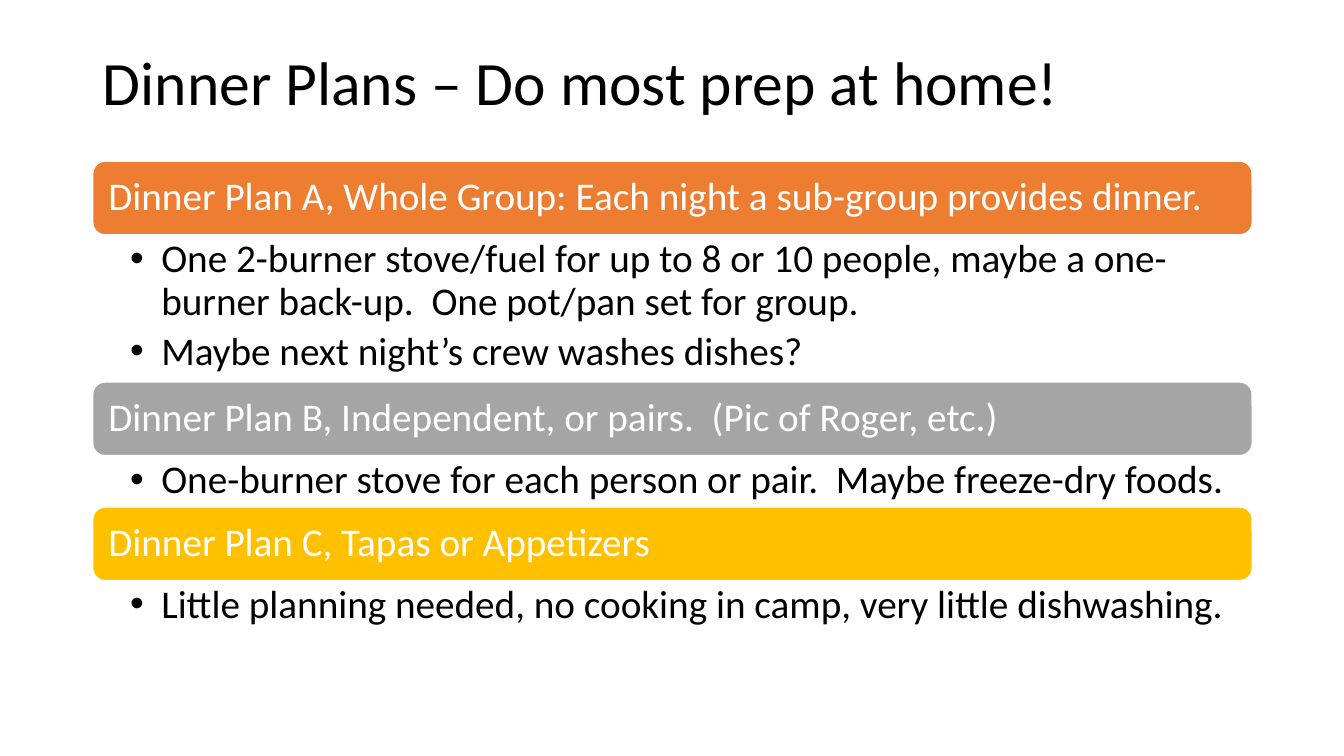
from dataclasses import dataclass

from lxml import etree
from pptx import Presentation
from pptx.dml.color import RGBColor
from pptx.enum.shapes import MSO_SHAPE
from pptx.enum.text import MSO_ANCHOR, MSO_AUTO_SIZE, PP_ALIGN
from pptx.oxml.ns import qn
from pptx.util import Inches, Pt

ROUNDED = MSO_SHAPE.ROUNDED_RECTANGLE
TOP, MIDDLE, BOTTOM = MSO_ANCHOR.TOP, MSO_ANCHOR.MIDDLE, MSO_ANCHOR.BOTTOM
LEFT = PP_ALIGN.LEFT
NO_AUTOFIT = MSO_AUTO_SIZE.NONE
COMPARISON_LAYOUT = 4  # one title and four bodies


@dataclass(frozen=True)
class Theme:
    font: str = "Calibri"
    title_size: int = 44
    text_size: int = 28
    dark: str = "000000"
    light: str = "FFFFFF"
    plan_a: str = "ED7D31"
    plan_b: str = "A5A5A5"
    plan_c: str = "FFC000"


THEME = Theme()
MARGIN, WIDTH = 0.92, 11.5
PLANS_TOP, BAR_HEIGHT = 1.6, 0.73

# Heading, bar colour, height of the list, list items
PLANS = [
    ("Dinner Plan A, Whole Group: Each night a sub-group provides dinner.",
     THEME.plan_a, 1.46,
     ["One 2-burner stove/fuel for up to 8 or 10 people, maybe a "
      "one-burner back-up.  One pot/pan set for group.",
      "Maybe next night’s crew washes dishes?"]),
    ("Dinner Plan B, Independent, or pairs.  (Pic of Roger, etc.)",
     THEME.plan_b, 0.51,
     ["One-burner stove for each person or pair.  Maybe freeze-dry foods."]),
    ("Dinner Plan C, Tapas or Appetizers",
     THEME.plan_c, 0.51,
     ["Little planning needed, no cooking in camp, very little dishwashing."]),
]


class SlideBuilder:
    def __init__(self, page, theme):
        self.page = page
        self.theme = theme
        self.bodies = [holder for holder in page.placeholders
                       if holder.placeholder_format.idx in range(1, 5)]

    def place(self, box, top, height):
        box.left, box.top = Inches(MARGIN), Inches(top)
        box.width, box.height = Inches(WIDTH), Inches(height)

    def set_text(self, box, lines, size, color, anchor, insets):
        frame = box.text_frame
        frame.text = "\n".join(lines)
        frame.word_wrap = True
        frame.auto_size = NO_AUTOFIT
        frame.vertical_anchor = anchor
        (frame.margin_left, frame.margin_top,
         frame.margin_right, frame.margin_bottom) = map(Inches, insets)
        for para in frame.paragraphs:
            para.alignment = LEFT
            para.line_spacing = 0.9
            para.space_before = Pt(0)
            para.font.name = self.theme.font
            para.font.size = Pt(size)
            para.font.bold = False
            para.font.color.rgb = RGBColor.from_string(color)
        return frame.paragraphs

    def title(self, text, top, height):
        box = self.page.shapes.title
        self.place(box, top, height)
        self.set_text(box, [text], self.theme.title_size, self.theme.dark,
                      BOTTOM, (0.1, 0.05, 0.1, 0.05))

    def bar(self, text, color, top):
        box = self.page.shapes.add_shape(
            ROUNDED, Inches(MARGIN), Inches(top), Inches(WIDTH), Inches(BAR_HEIGHT))
        box.shadow.inherit = False
        box.fill.solid()
        box.fill.fore_color.rgb = RGBColor.from_string(color)
        box.line.color.rgb = RGBColor.from_string(self.theme.light)
        box.line.width = Pt(1)
        self.set_text(box, [text], self.theme.text_size, self.theme.light,
                      MIDDLE, (0.12, 0.1, 0.12, 0.1))

    def bullets(self, items, top, height):
        box = self.bodies.pop(0)
        self.place(box, top, height)
        for para in self.set_text(box, items, self.theme.text_size, self.theme.dark,
                                  TOP, (0.37, 0.04, 0.22, 0.04)):
            para.level = 1
            para.space_after = Pt(self.theme.text_size * 0.2)
            properties = para._p.get_or_add_pPr()
            properties.set("marL", str(Inches(0.31)))
            properties.set("indent", str(Inches(-0.31)))
            etree.SubElement(properties, qn("a:buFont"), typeface="Arial")
            etree.SubElement(properties, qn("a:buChar"), char="•")
            # Run defaults come after the bullet
            defaults = properties.find(qn("a:defRPr"))
            if defaults is not None:
                properties.append(defaults)

    def remove_empty(self):
        for holder in list(self.page.placeholders):
            if not holder.text_frame.text:
                holder.element.getparent().remove(holder.element)


def main():
    deck = Presentation()
    deck.slide_width, deck.slide_height = Inches(13.33), Inches(7.5)
    page = deck.slides.add_slide(deck.slide_layouts[COMPARISON_LAYOUT])
    builder = SlideBuilder(page, THEME)

    builder.title("Dinner Plans – Do most prep at home!", 0, 1.23)

    # Each plan stacks a coloured bar on its list
    top = PLANS_TOP
    for heading, color, list_height, items in PLANS:
        builder.bar(heading, color, top)
        builder.bullets(items, top + BAR_HEIGHT, list_height)
        top += BAR_HEIGHT + list_height

    builder.remove_empty()
    deck.save("out.pptx")


if __name__ == "__main__":
    main()
